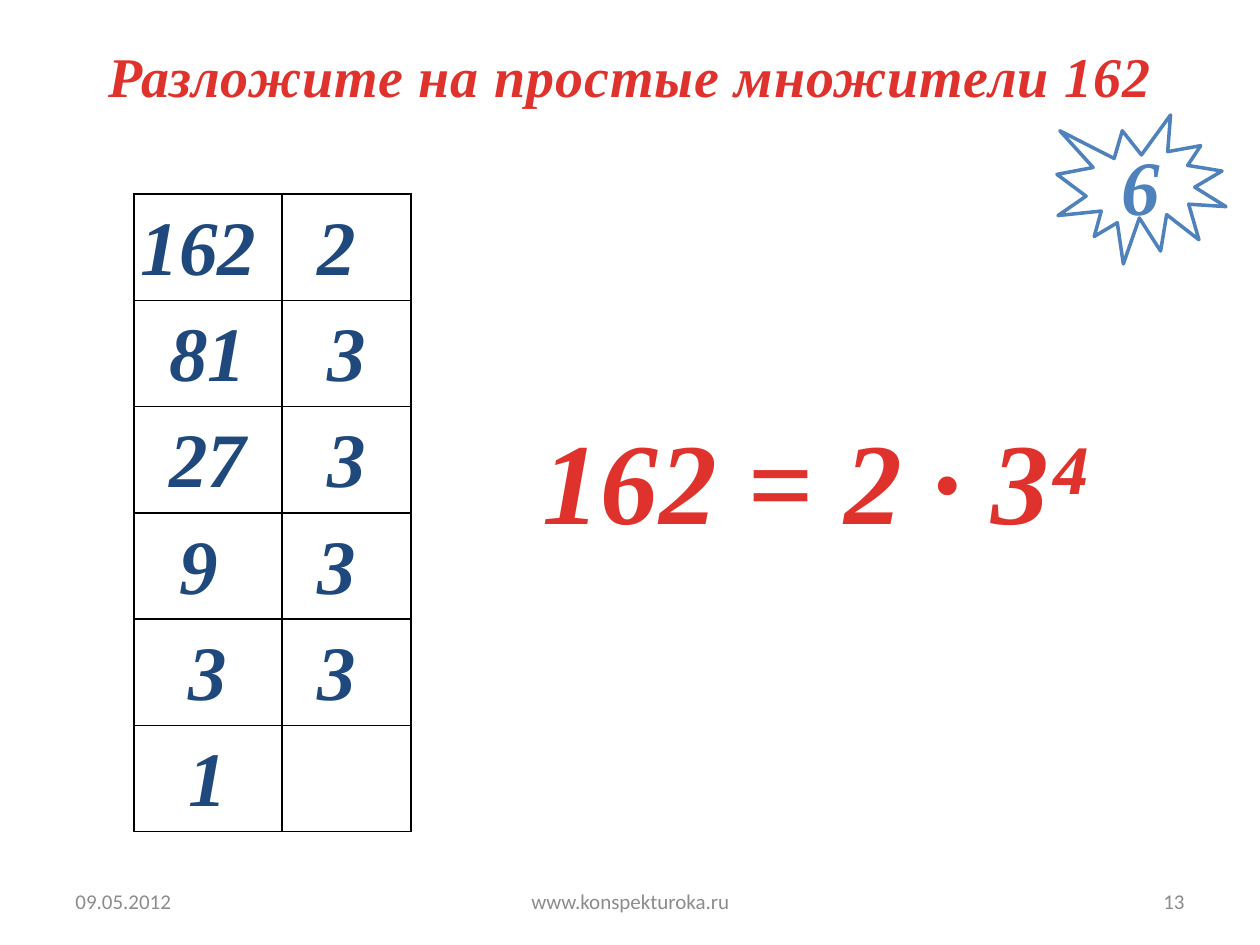
from lxml.etree import SubElement
from pptx import Presentation
from pptx.dml.color import RGBColor
from pptx.enum.shapes import MSO_SHAPE
from pptx.enum.text import MSO_ANCHOR, PP_ALIGN
from pptx.oxml.ns import qn
from pptx.util import Pt

PX = 914400 // 126
RED, NAVY, BLUE, GRAY = "E0322D", "1F497D", "4F81BD", "8C8C8C"
SERIF, SANS = "Times New Roman", "Calibri"
LEFT, MID, RIGHT = PP_ALIGN.LEFT, PP_ALIGN.CENTER, PP_ALIGN.RIGHT

# Content: box, text, size, alignment, wrap
HEADS = [
    ((94, 35, 1072, 81), "Разложите на простые множители 162", 32, MID, True),
    ((530, 403, 586, 152), "162 = 2 ∙ 3⁴", 66, LEFT, False),
]
FOOT = [
    ((63, 876, 294, 50), "09.05.2012", LEFT),
    ((431, 876, 399, 50), "www.konspekturoka.ru", MID),
    ((903, 876, 294, 50), "13", RIGHT),
]
STEPS = [("162 ", "2 "), ("81", "3"), ("27", "3"),
         ("9 ", "3 "), ("3", "3 "), ("1", "")]
COLS, ROW = (148, 129), 106
GRID = (134, 194)
SEAL = (1057, 115, 169, 149)


def px(*vals):
    return [v * PX for v in vals]


def color(code):
    return RGBColor.from_string(code)


def write(frame, text, size, hue, align=MID, face=SERIF, gap=None):
    frame.text = text
    par = frame.paragraphs[0]
    par.alignment = align
    for run in par.runs:
        font = run.font
        font.size, font.name = Pt(size), face
        font.bold = font.italic = face == SERIF
        font.color.rgb = color(hue)
        if gap:
            run._r.get_or_add_rPr().set("spc", str(gap))
    return par


def border(cell):
    props = cell._tc.get_or_add_tcPr()
    for side in ("lnL", "lnR", "lnT", "lnB"):
        line = SubElement(props, qn("a:" + side), w=str(Pt(1)))
        fill = SubElement(line, qn("a:solidFill"))
        SubElement(fill, qn("a:srgbClr"), val="000000")


deck = Presentation()
deck.slide_width, deck.slide_height = px(1260, 945)
slide = deck.slides.add_slide(deck.slide_layouts[6])
shapes = slide.shapes

# Footer
for box, text, align in FOOT:
    frame = shapes.add_textbox(*px(*box)).text_frame
    frame.word_wrap = True
    frame.vertical_anchor = MSO_ANCHOR.MIDDLE
    write(frame, text, 12, GRAY, align, SANS)

# Title and answer
for box, text, size, align, wrap in HEADS:
    frame = shapes.add_textbox(*px(*box)).text_frame
    frame.word_wrap = wrap
    write(frame, text, size, RED, align, gap=50)

# Factor table
size = px(sum(COLS), ROW * len(STEPS))
table = shapes.add_table(len(STEPS), len(COLS), *px(*GRID), *size).table
table.first_row = table.horz_banding = False
for col, wide in zip(table.columns, COLS):
    col.width = wide * PX
for row, pair in zip(table.rows, STEPS):
    row.height = ROW * PX
    for cell, text in zip(row.cells, pair):
        cell.margin_left = cell.margin_right = 4 * PX
        cell.margin_top = cell.margin_bottom = 0
        border(cell)
        cell.fill.background()
        write(cell.text_frame, text, 44, NAVY).line_spacing = 1.15

# Numbered star
seal = shapes.add_shape(MSO_SHAPE.EXPLOSION1, *px(*SEAL))
seal.shadow.inherit = False
seal.fill.solid()
seal.fill.fore_color.rgb = color("FFFFFF")
seal.line.color.rgb = color(BLUE)
seal.line.width = Pt(2)
seal.text_frame.vertical_anchor = MSO_ANCHOR.MIDDLE
write(seal.text_frame, "6", 44, BLUE)

deck.save("out.pptx")
